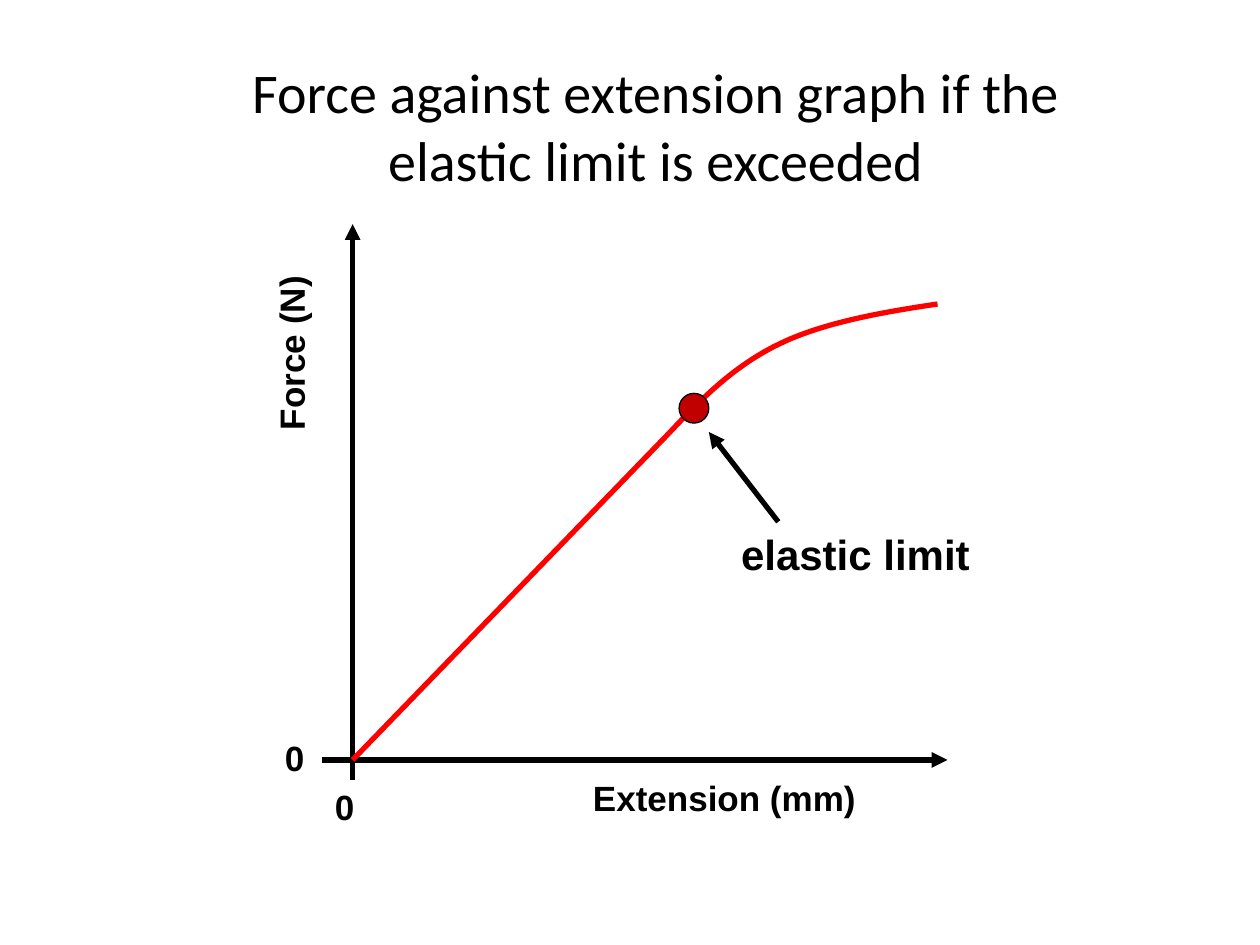
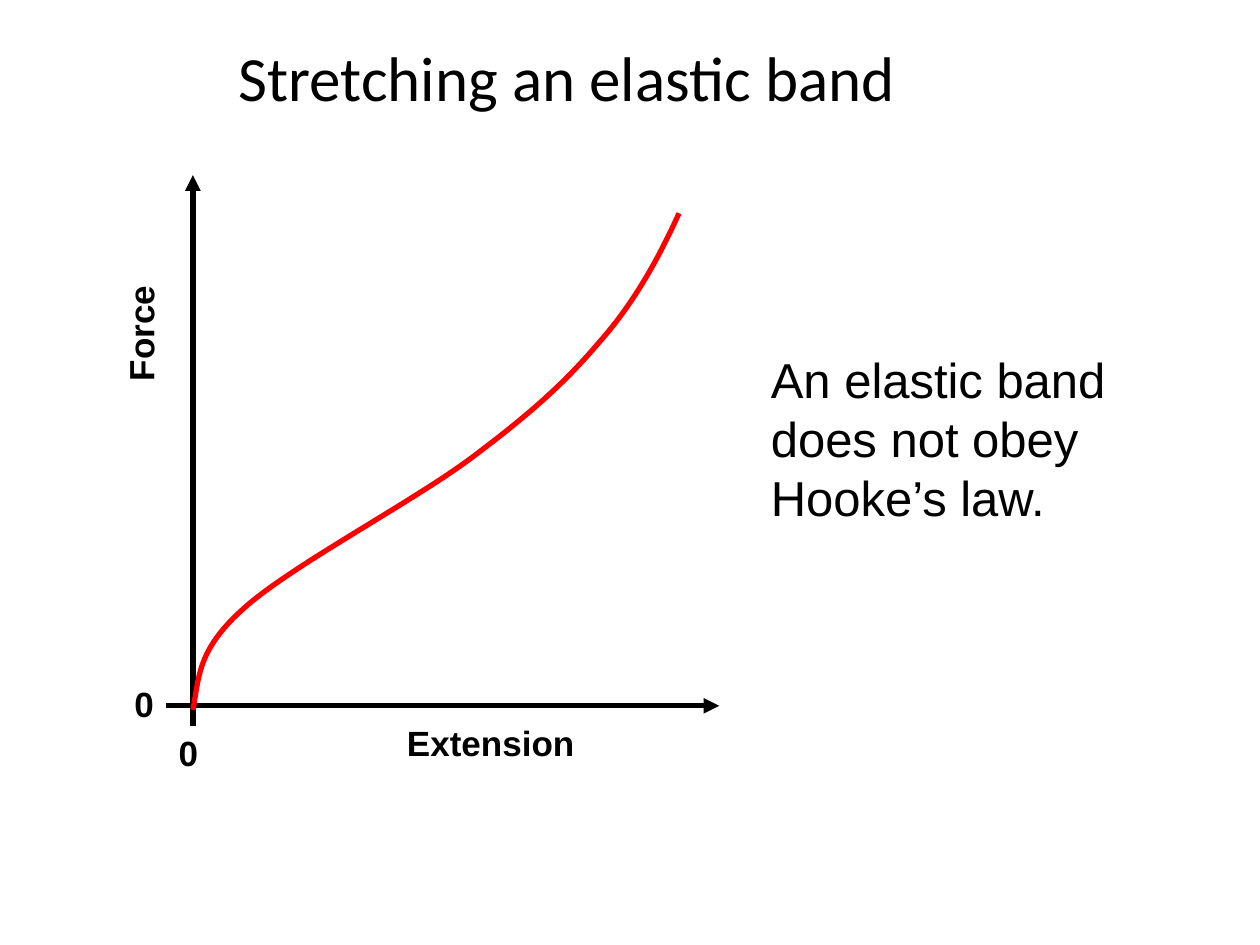
from dataclasses import dataclass

from lxml.etree import SubElement
from pptx import Presentation
from pptx.dml.color import RGBColor
from pptx.enum.shapes import MSO_CONNECTOR, MSO_SHAPE
from pptx.enum.text import MSO_ANCHOR, PP_ALIGN
from pptx.oxml.ns import qn
from pptx.util import Cm, Pt


@dataclass(frozen=True)
class Theme:
    """Colours, fonts and sizes shared by the slides."""
    ink: RGBColor = RGBColor(0, 0, 0)
    curve: RGBColor = RGBColor(255, 0, 0)
    limit: RGBColor = RGBColor(192, 0, 0)
    head: str = "Calibri"
    text: str = "Arial"
    axis: int = 20
    call: int = 24
    note: int = 28
    thick: float = 3
    thin: float = 0.75


@dataclass(frozen=True)
class Box:
    """A region of the slide in centimetres."""
    left: float
    top: float
    width: float
    height: float

    @property
    def origin(self):
        """Return the point where the graph axes cross."""
        return self.left + 0.0484 * self.width, self.top + self.height - 0.4

    def plot(self, points):
        """Turn graph points, with y upwards, into slide points."""
        x, y = self.origin
        return [(x + across, y - up) for across, up in points]

    def lengths(self):
        """Return the four sides as lengths."""
        return [Cm(n) for n in (self.left, self.top, self.width, self.height)]


THEME = Theme()


def style(frame, size, font=THEME.text, bold=False):
    """Format every run of a text frame."""
    for para in frame.paragraphs:
        for run in para.runs:
            run.font.name = font
            run.font.size = Pt(size)
            run.font.bold = bold
            run.font.color.rgb = THEME.ink


def title(slide, text, box, size):
    """Place and format the slide title."""
    shape = slide.shapes.title
    shape.left, shape.top, shape.width, shape.height = box.lengths()
    frame = shape.text_frame
    frame.text = text
    frame.vertical_anchor = MSO_ANCHOR.MIDDLE
    frame.paragraphs[0].alignment = PP_ALIGN.CENTER
    style(frame, size, THEME.head)


def label(slide, text, box, size=THEME.axis, bold=True, turn=0):
    """Add a wrapped text box."""
    shape = slide.shapes.add_textbox(*box.lengths())
    shape.rotation = turn
    frame = shape.text_frame
    frame.word_wrap = True
    frame.text = text
    style(frame, size, bold=bold)


def line(slide, start, end, colour=THEME.ink, arrow=True):
    """Draw a straight line, with an arrowhead if wanted."""
    ends = [Cm(n) for n in (*start, *end)]
    shape = slide.shapes.add_connector(MSO_CONNECTOR.STRAIGHT, *ends)
    shape.line.color.rgb = colour
    shape.line.width = Pt(THEME.thick)
    if arrow:
        SubElement(shape.line._get_or_add_ln(), qn("a:tailEnd"), type="triangle")
    SubElement(shape._element.spPr, qn("a:effectLst"))


def bezier(points, steps=24):
    """Sample a chain of cubic curves."""
    path = [points[0]]
    for i in range(0, len(points) - 1, 3):
        for step in range(1, steps + 1):
            t = step / steps
            u = 1 - t
            mix = (u ** 3, 3 * u * u * t, 3 * u * t * t, t ** 3)
            path.append(tuple(sum(m * p[k] for m, p in zip(mix, points[i:i + 4]))
                              for k in (0, 1)))
    return path


def curve(slide, box, points):
    """Draw a smooth curve on the graph."""
    path = [(Cm(x), Cm(y)) for x, y in bezier(box.plot(points))]
    form = slide.shapes.build_freeform(*path[0])
    form.add_line_segments(path[1:], close=False)
    shape = form.convert_to_shape()
    shape.shadow.inherit = False
    shape.fill.background()
    shape.line.color.rgb = THEME.curve
    shape.line.width = Pt(THEME.thick)


def axes(slide, box, across, up):
    """Draw both axes with their names and zeros."""
    x, y = box.origin
    base = box.top + box.height
    side = box.left - 0.08 * box.width
    zero, tall, long = 0.11 * box.width, 1.09, 4
    line(slide, (x, base), (x, box.top))
    line(slide, (box.left, y), (box.left + box.width, y))
    label(slide, "0", Box(box.left, base, zero, tall))
    label(slide, up, Box(side + 0.37 - long / 2, box.top + 2.4 - tall / 2, long, tall),
          turn=270)
    label(slide, "0", Box(side, y - 0.6, zero, tall))
    label(slide, across, Box(box.left + 0.413 * box.width, y + 0.2, 0.49 * box.width, tall))


def limit(slide, box, point):
    """Mark and name the elastic limit."""
    x, y = box.plot([point])[0]
    size = 0.6
    dot = slide.shapes.add_shape(
        MSO_SHAPE.OVAL, *Box(x - size / 2, y - size / 2, size, size).lengths())
    dot.shadow.inherit = False
    dot.fill.solid()
    dot.fill.fore_color.rgb = THEME.limit
    dot.line.color.rgb = THEME.ink
    dot.line.width = Pt(THEME.thin)
    label(slide, "elastic limit", Box(x + 0.7, y + 2.29, 5.6, 1.27), THEME.call)
    line(slide, (x + 1.7, y + 2.29), (x + 0.3, y + 0.48))


def spring(slide, box):
    """Build the graph that passes the elastic limit."""
    title(slide, "Force against extension graph if the elastic limit is exceeded",
          Box(3.3, 0.74, 19.84, 3.56), 32)
    axes(slide, box, "Extension (mm)", "Force (N)")
    bend = [(6.38, 6.59), (7.04, 7.29), (7.7, 7.95), (8.59, 8.38),
            (9.47, 8.81), (10.64, 9.02), (11.79, 9.19)]
    line(slide, box.origin, box.plot(bend)[0], THEME.curve, False)
    curve(slide, box, bend)
    limit(slide, box, (6.88, 7.09))


def band(slide, box):
    """Build the elastic band graph and its remark."""
    title(slide, "Stretching an elastic band", Box(0, 0.76, 22.86, 1.55), 36)
    axes(slide, box, "Extension", "Force")
    curve(slide, box, [
        (0, -0.08), (0.13, 0.58), (0.08, 1.12), (1.02, 1.96),
        (1.93, 2.79), (4.39, 4.09), (5.59, 4.98),
        (6.78, 5.87), (7.49, 6.5), (8.2, 7.34),
        (8.92, 8.15), (9.42, 9.09), (9.8, 9.93)])
    label(slide, "An elastic band does not obey Hooke’s law.",
          Box(box.left + box.width + 0.79, box.top + 3.4, 8.4, 3.8), THEME.note, False)


def main():
    """Create and save the deck."""
    deck = Presentation()
    deck.slide_width, deck.slide_height = Cm(25.4), Cm(19.05)
    plan = ((spring, Box(6.5, 4.52, 12.6, 11.2)), (band, Box(3.35, 3.53, 11.15, 11.1)))
    for build, box in plan:
        build(deck.slides.add_slide(deck.slide_layouts[5]), box)
    deck.save("out.pptx")


if __name__ == "__main__":
    main()
